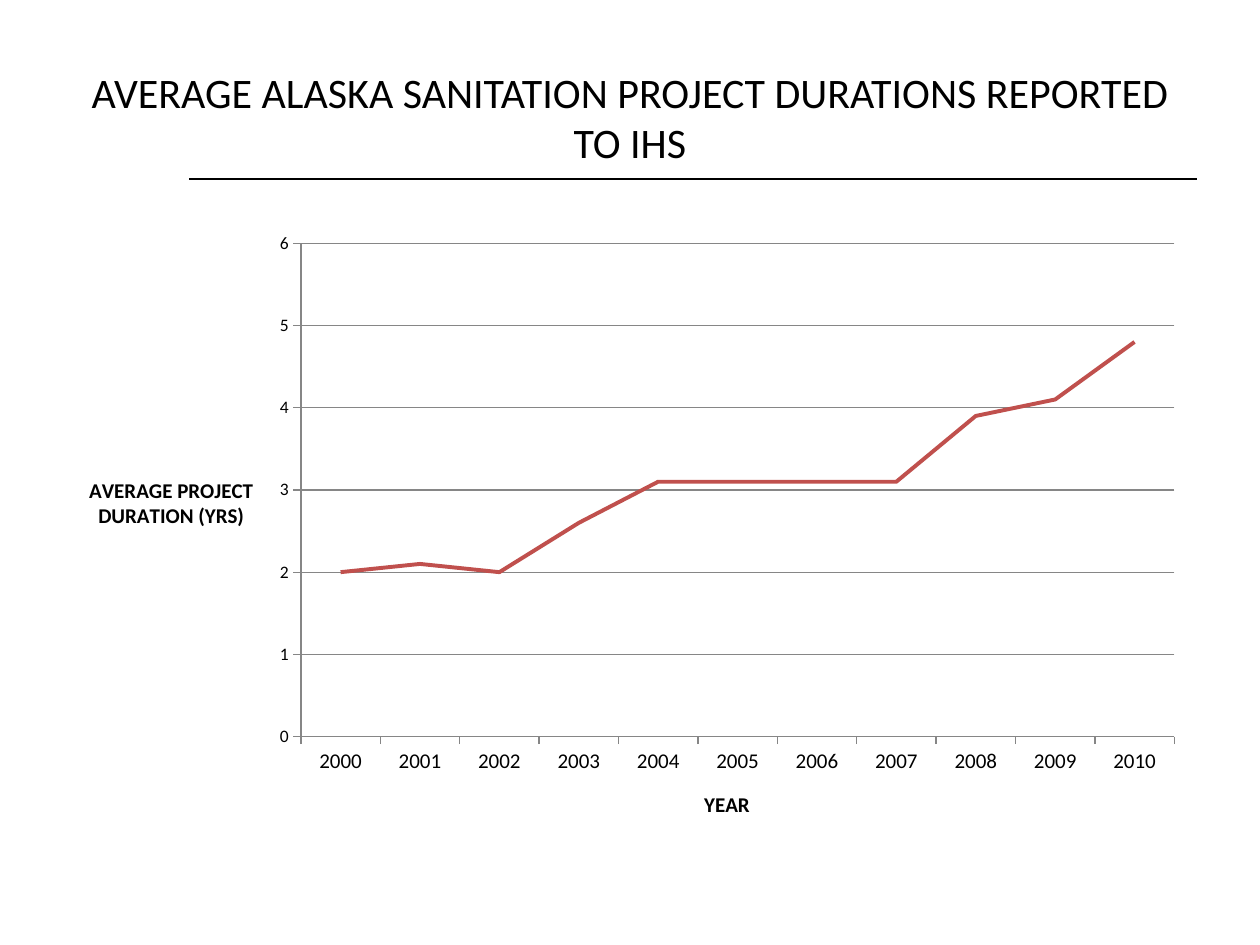
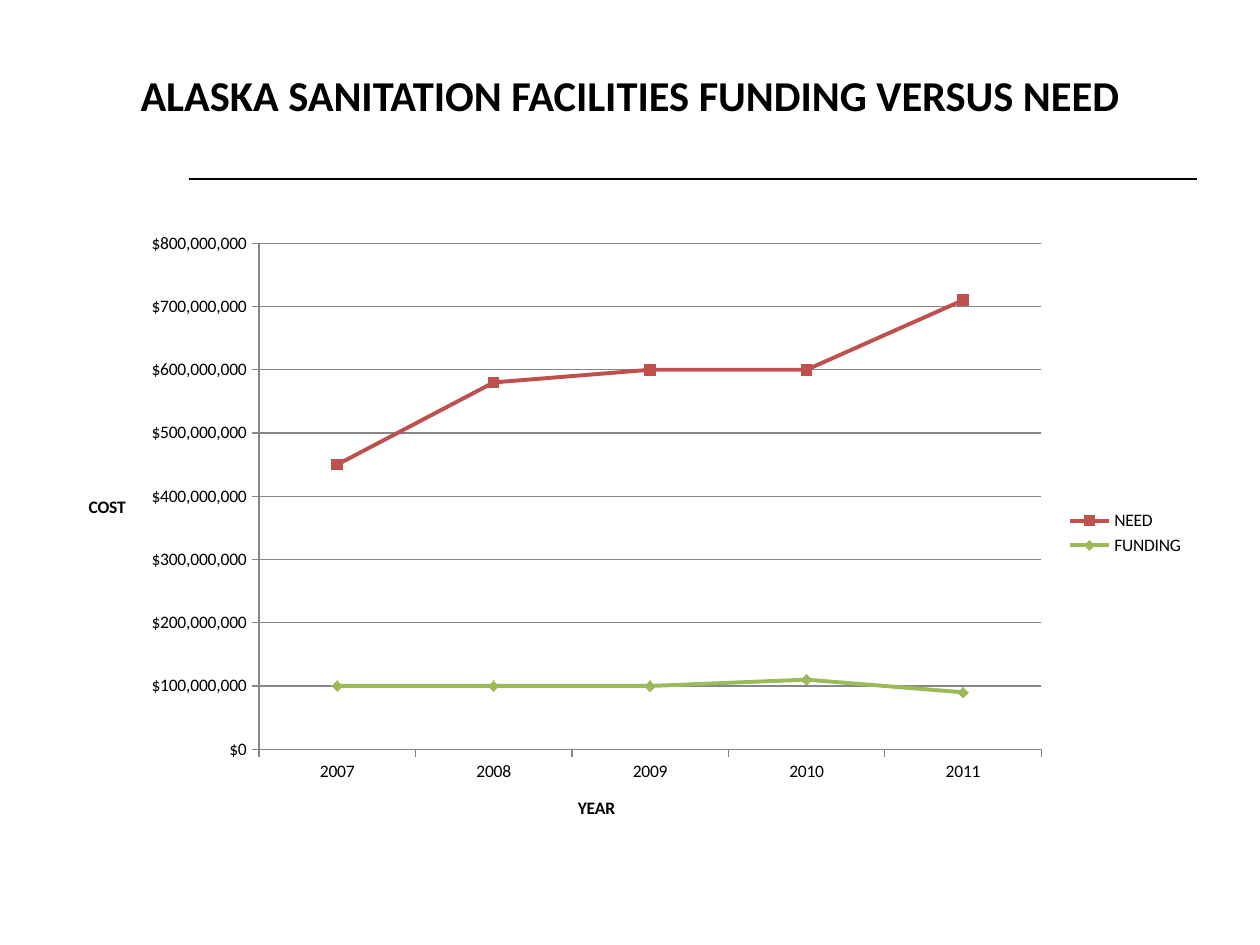
"""Two line-chart slides on Alaska sanitation projects."""
from pptx import Presentation
from pptx import util as u
from pptx.chart import data as cd
from pptx.dml.color import RGBColor
from pptx.enum import chart as ec, shapes, text
from pptx.oxml.ns import qn
from lxml import etree

FONT, BLACK, GREY, RED, GREEN = "Calibri", "000000", "868686", "C0504D", "9BBB59"
DIAMOND, SQUARE = ec.XL_MARKER_STYLE.DIAMOND, ec.XL_MARKER_STYLE.SQUARE


def px(n):
    return u.Emu(round(n * 914400 / 126))


def style(font, size, bold=False, color=BLACK):
    font.name, font.size, font.bold = FONT, u.Pt(size), bold
    font.color.rgb = RGBColor.from_string(color)


slides = [
    dict(title="AVERAGE ALASKA SANITATION PROJECT DURATIONS REPORTED TO IHS",
         top=38, height=157, size=24, bold=False, anchor=text.MSO_ANCHOR.MIDDLE,
         kind=ec.XL_CHART_TYPE.LINE_STACKED, years=range(2000, 2011),
         series=[("Series 1", RED, None,
                  [2, 2.1, 2, 2.6, 3.1, 3.1, 3.1, 3.1, 3.9, 4.1, 4.8])],
         value_title="AVERAGE PROJECT DURATION (YRS)", title_size=12, year_size=12,
         top_value=6, step=1, fmt="General", legend=False),
    dict(title="ALASKA SANITATION FACILITIES FUNDING VERSUS NEED",
         top=69, height=126, size=24.3, bold=True, anchor=text.MSO_ANCHOR.TOP,
         kind=ec.XL_CHART_TYPE.LINE_MARKERS, years=range(2007, 2012),
         series=[("NEED", RED, SQUARE, [m * 10**6 for m in (450, 580, 600, 600, 710)]),
                 ("FUNDING", GREEN, DIAMOND, [m * 10**6 for m in (100, 100, 100, 110, 90)])],
         value_title="COST", title_size=10, year_size=10,
         top_value=800 * 10**6, step=100 * 10**6, fmt='"$"#,##0', legend=True),
]

prs = Presentation()
prs.slide_width, prs.slide_height = px(1260), px(945)

for d in slides:
    s = prs.slides.add_slide(prs.slide_layouts[6])

    rule = s.shapes.add_connector(shapes.MSO_CONNECTOR.STRAIGHT,
                                  px(189), px(179), px(1197), px(179))
    rule.line.color.rgb = RGBColor.from_string(BLACK)
    rule.line.width = u.Pt(1)
    etree.SubElement(rule._element.spPr, qn("a:effectLst"))

    sp = s.shapes.add_textbox(px(63), px(d["top"]), px(1134), px(d["height"]))
    tf = sp.text_frame
    tf.word_wrap = True
    tf.vertical_anchor = d["anchor"]
    tf.margin_top = tf.margin_bottom = 0
    p = tf.paragraphs[0]
    p.alignment = text.PP_ALIGN.CENTER
    r = p.add_run()
    r.text = d["title"]
    style(r.font, d["size"], d["bold"])

    data = cd.CategoryChartData(number_format=d["fmt"])
    data.categories = [str(y) for y in d["years"]]
    for name, color, marker, values in d["series"]:
        data.add_series(name, values)
    chart = s.shapes.add_chart(d["kind"], px(63), px(221), px(1134), px(624), data).chart
    style(chart.font, 10)
    chart.has_title = False
    chart.has_legend = d["legend"]
    if d["legend"]:
        chart.legend.position = ec.XL_LEGEND_POSITION.RIGHT
        chart.legend.include_in_layout = False
        style(chart.legend.font, 10)

    plot = chart.plots[0]
    plot.vary_by_categories = False
    for ser, (name, color, marker, values) in zip(plot.series, d["series"]):
        rgb = RGBColor.from_string(color)
        ser.smooth = False
        ser.format.line.color.rgb = rgb
        ser.format.line.width = u.Pt(2.25)
        ser.marker.style = marker or ec.XL_MARKER_STYLE.NONE
        if marker:
            ser.marker.size = 6
            ser.marker.format.fill.solid()
            ser.marker.format.fill.fore_color.rgb = rgb
            ser.marker.format.line.color.rgb = rgb

    cat, val = chart.category_axis, chart.value_axis
    for axis, label, size in ((cat, "YEAR", d["year_size"]), (val, d["value_title"], 10)):
        tf = axis.axis_title.text_frame
        r = tf.paragraphs[0].add_run()
        r.text = label
        style(r.font, d["title_size"], True)
        body = tf._txBody.bodyPr
        body.set("rot", "0")
        body.set("vert", "horz")
        style(axis.tick_labels.font, size)
        axis.major_tick_mark = ec.XL_TICK_MARK.OUTSIDE
        axis.minor_tick_mark = ec.XL_TICK_MARK.NONE
        axis.format.line.color.rgb = RGBColor.from_string(GREY)
        axis.format.line.width = u.Pt(0.75)
    cat.has_major_gridlines = False
    val.has_major_gridlines = True
    val.major_gridlines.format.line.color.rgb = RGBColor.from_string(GREY)
    val.major_gridlines.format.line.width = u.Pt(0.75)
    val.minimum_scale, val.maximum_scale, val.major_unit = 0, d["top_value"], d["step"]
    val.tick_labels.number_format = d["fmt"]
    val.tick_labels.number_format_is_linked = False

prs.save("out.pptx")
